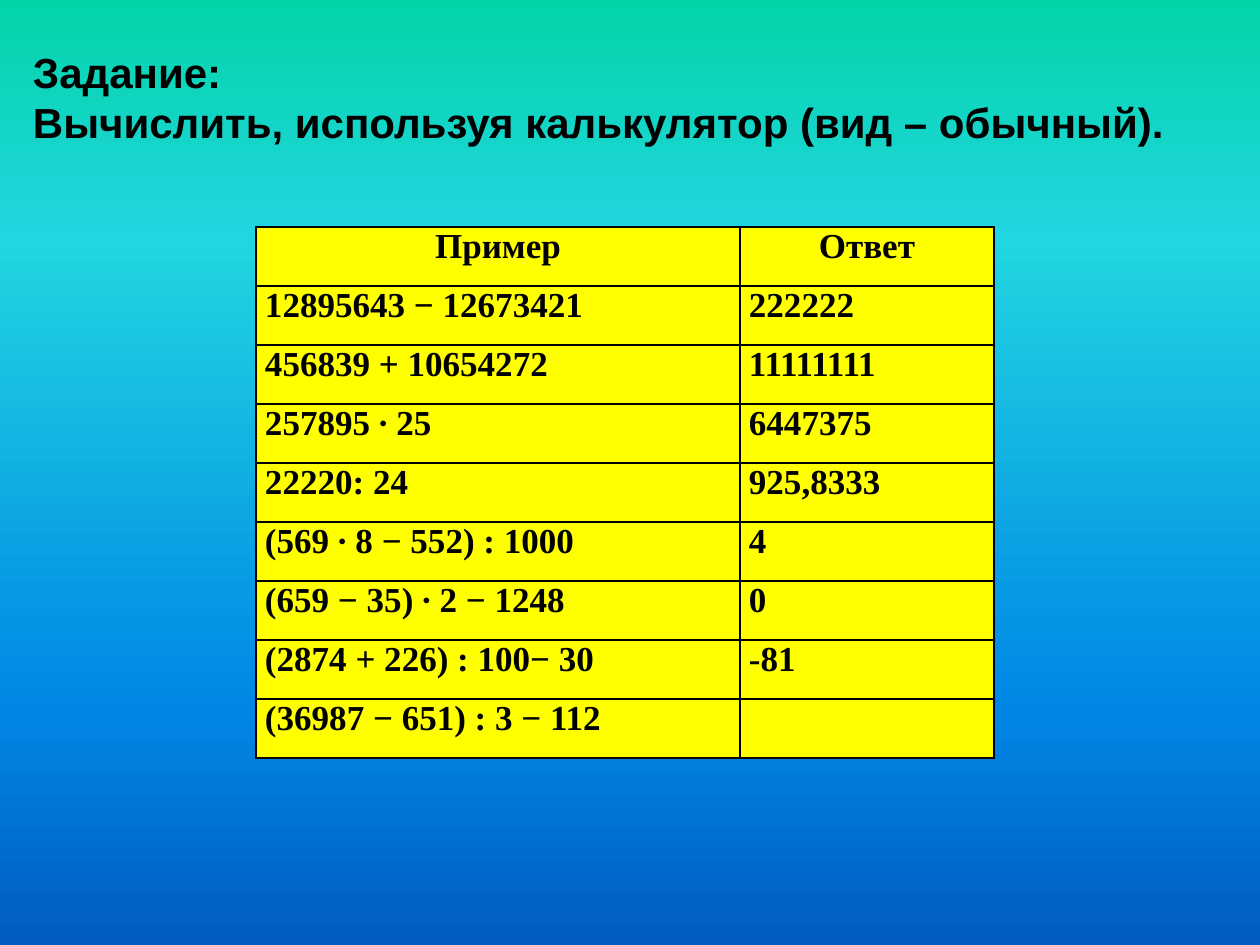
from dataclasses import dataclass

from lxml.etree import SubElement
from pptx import Presentation
from pptx.dml.color import RGBColor
from pptx.enum.text import MSO_ANCHOR, MSO_AUTO_SIZE, PP_ALIGN
from pptx.oxml.ns import qn
from pptx.util import Emu, Pt


@dataclass(frozen=True)
class Theme:
    ink: str = "000000"
    cell: str = "FFFF00"
    sky: tuple = ((0, "03D4A8"), (25, "21D6E0"), (75, "0087E6"), (100, "005CBF"))
    heading_font: str = "Arial"
    heading_size: int = 24
    table_font: str = "Times New Roman"
    table_size: int = 20
    border: int = 1


theme = Theme()
EMU_PER_PX = 914400 / 126


def px(length):
    return Emu(round(length * EMU_PER_PX))


def style(target, values):
    for name, value in values.items():
        setattr(target, name, value)


deck = Presentation()
style(deck, {"slide_width": px(1260), "slide_height": px(945)})
slide = deck.slides.add_slide(deck.slide_layouts[5])

sky = slide.background.fill
sky.gradient()
sky.gradient_angle = 270
stops = slide.element.find(".//" + qn("a:gsLst"))
for stop in list(stops):
    stops.remove(stop)
for percent, color in theme.sky:
    stop = SubElement(stops, qn("a:gs"), pos=str(percent * 1000))
    SubElement(stop, qn("a:srgbClr"), val=color)

task = slide.shapes.title
style(task, {"left": px(20), "top": px(39), "width": px(1191), "height": px(165)})
style(task.text_frame, {
    "word_wrap": True,
    "auto_size": MSO_AUTO_SIZE.NONE,
    "vertical_anchor": MSO_ANCHOR.MIDDLE,
    "margin_left": px(13),
    "margin_right": px(13),
    "margin_top": px(6),
    "margin_bottom": px(56),
})
task.text_frame.text = "Задание:\nВычислить, используя калькулятор (вид – обычный)."
heading_format = {
    "name": theme.heading_font,
    "size": Pt(theme.heading_size),
    "bold": True,
}
for line in task.text_frame.paragraphs:
    line.alignment = PP_ALIGN.LEFT
    style(line.runs[0].font, heading_format)
    line.runs[0].font.color.rgb = RGBColor.from_string(theme.ink)

exercises = [
    ("Пример", "Ответ"),
    ("12895643 − 12673421", "222222"),
    ("456839 + 10654272", "11111111"),
    ("257895 ∙ 25", "6447375"),
    ("22220: 24", "925,8333"),
    ("(569 ∙ 8 − 552) : 1000", "4"),
    ("(659 − 35) ∙ 2 − 1248", "0"),
    ("(2874 + 226) : 100− 30", "-81"),
    ("(36987 − 651) : 3 − 112", ""),
]
column_widths = (484, 254)
row_height = 59
answers = slide.shapes.add_table(
    len(exercises), len(column_widths), px(256), px(227),
    px(sum(column_widths)), px(row_height * len(exercises)),
).table
style(answers, {"first_row": False, "horz_banding": False})
for column, width in zip(answers.columns, column_widths):
    column.width = px(width)

cell_format = {
    "margin_left": px(9),
    "margin_right": px(9),
    "margin_top": 0,
    "margin_bottom": 0,
    "vertical_anchor": MSO_ANCHOR.TOP,
}
entry_format = {"name": theme.table_font, "size": Pt(theme.table_size), "bold": True}
for row_index, exercise in enumerate(exercises):
    answers.rows[row_index].height = px(row_height)
    for column_index, entry in enumerate(exercise):
        cell = answers.cell(row_index, column_index)
        style(cell, cell_format)
        properties = cell._tc.get_or_add_tcPr()
        for side in ("lnL", "lnR", "lnT", "lnB"):
            edge = SubElement(properties, qn(f"a:{side}"), w=str(Pt(theme.border)))
            SubElement(SubElement(edge, qn("a:solidFill")), qn("a:srgbClr"), val=theme.ink)
        cell.fill.solid()
        cell.fill.fore_color.rgb = RGBColor.from_string(theme.cell)
        paragraph = cell.text_frame.paragraphs[0]
        paragraph.alignment = PP_ALIGN.LEFT if row_index else PP_ALIGN.CENTER
        if entry:
            run = paragraph.add_run()
            run.text = entry
            style(run.font, entry_format)
            run.font.color.rgb = RGBColor.from_string(theme.ink)

deck.save("out.pptx")
